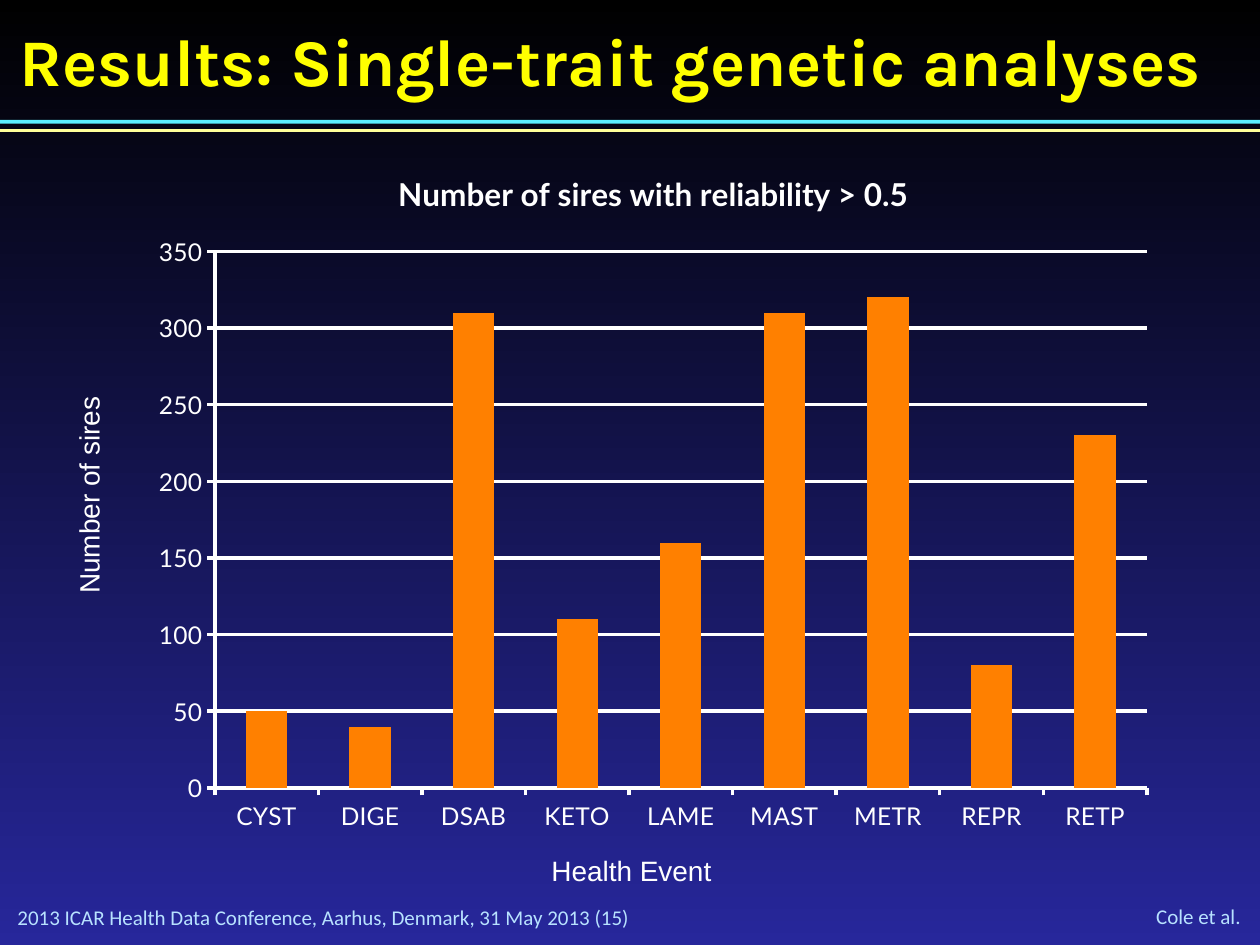
from dataclasses import dataclass

from lxml.etree import SubElement
from pptx import Presentation
from pptx.chart.data import CategoryChartData
from pptx.dml.color import RGBColor
from pptx.enum.chart import XL_CHART_TYPE, XL_TICK_MARK
from pptx.enum.shapes import MSO_SHAPE
from pptx.enum.text import MSO_ANCHOR, PP_ALIGN
from pptx.oxml.ns import qn
from pptx.util import Pt


@dataclass(frozen=True)
class Theme:
    """Colours, fonts and type sizes of the deck."""
    top: str = "000000"
    bottom: str = "27279B"
    heading: str = "FFFF00"
    cyan: str = "5BEFFF"
    cream: str = "FFFF99"
    footer: str = "B8E2FF"
    text: str = "FFFFFF"
    bar: str = "FF8000"
    heading_font: str = "Karla"
    chart_font: str = "Lato"
    label_font: str = "Arial"
    footer_font: str = "Calibri"
    heading_size: int = 38
    chart_title_size: int = 18
    label_size: int = 16
    tick_size: int = 14
    footer_size: int = 12


THEME = Theme()
CHART_TITLE = "Number of sires with reliability > 0.5"
SIRES = {"CYST": 50, "DIGE": 40, "DSAB": 310, "KETO": 110, "LAME": 160,
         "MAST": 310, "METR": 320, "REPR": 80, "RETP": 230}


def rgb(code):
    """Turn a hex code into a colour."""
    return RGBColor.from_string(code)


def style_font(font, name, size, color, bold=False):
    """Set the face, size, colour and weight of a font."""
    font.name, font.size, font.bold = name, Pt(size), bold
    font.color.rgb = rgb(color)


def add_text(slide, box, text, *, font, size, color, bold=False,
             align=PP_ALIGN.LEFT, anchor=MSO_ANCHOR.MIDDLE, rotation=0):
    """Place one line of formatted text in a box."""
    label = slide.shapes.add_textbox(*map(Pt, box))
    label.rotation = rotation
    frame = label.text_frame
    frame.word_wrap = True
    frame.vertical_anchor = anchor
    frame.margin_left = frame.margin_right = 0
    frame.margin_top = frame.margin_bottom = 0
    paragraph = frame.paragraphs[0]
    paragraph.alignment = align
    run = paragraph.add_run()
    run.text = text
    style_font(run.font, font, size, color, bold)


def paint_background(slide):
    """Fill the slide with the vertical gradient."""
    fill = slide.background.fill
    fill.gradient()
    fill.gradient_angle = 270
    for stop, color, position in zip(fill.gradient_stops, (THEME.top, THEME.bottom), (0, 1)):
        stop.color.rgb = rgb(color)
        stop.position = position


def add_header(slide, box):
    """Place the heading above its two full-width rules."""
    left, top, width, height = box
    add_text(slide, (left + 11.2, top + 11.5, width - 21, 46),
             "Results: Single-trait genetic analyses", font=THEME.heading_font,
             size=THEME.heading_size, color=THEME.heading, bold=True, anchor=MSO_ANCHOR.TOP)
    for offset, thickness, color in ((7.5, 2.2, THEME.cyan), (2.2, 1.6, THEME.cream)):
        rule = slide.shapes.add_shape(MSO_SHAPE.RECTANGLE, Pt(left), Pt(top + height - offset),
                                      Pt(width), Pt(thickness))
        rule.shadow.inherit = False
        rule.fill.solid()
        rule.fill.fore_color.rgb = rgb(color)
        rule.line.fill.background()


def style_line(line):
    """Give a chart line the white two-point stroke."""
    line.color.rgb = rgb(THEME.text)
    line.width = Pt(2)


def fix_plot_area(chart, size, plot_box):
    """Pin the inner plot area to a box in points within the chart."""
    plot_area = chart.plots[0]._element.getparent()
    layout = plot_area.find(qn("c:layout"))
    if layout is None:
        layout = SubElement(plot_area, qn("c:layout"))
        plot_area.insert(0, layout)
    manual = SubElement(layout, qn("c:manualLayout"))
    settings = {"layoutTarget": "inner", "xMode": "edge", "yMode": "edge"}
    for tag, length, whole in zip("xywh", plot_box, size * 2):
        settings[tag] = length / whole
    for tag, value in settings.items():
        SubElement(manual, qn(f"c:{tag}")).set("val", str(value))


def add_sire_chart(slide, box):
    """Place the column chart of sires per health event."""
    data = CategoryChartData()
    data.categories = list(SIRES)
    data.add_series(CHART_TITLE, list(SIRES.values()))
    chart = slide.shapes.add_chart(XL_CHART_TYPE.COLUMN_STACKED, *map(Pt, box), data).chart
    style_font(chart.font, THEME.chart_font, THEME.tick_size, THEME.text)
    chart.has_legend = False
    chart.has_title = True
    title = chart.chart_title.text_frame
    title.text = CHART_TITLE
    style_font(title.paragraphs[0].runs[0].font, THEME.chart_font,
               THEME.chart_title_size, THEME.text, bold=True)
    plot = chart.plots[0]
    plot.gap_width, plot.overlap = 150, 100
    plot.vary_by_categories = False
    columns = plot.series[0].format.fill
    columns.solid()
    columns.fore_color.rgb = rgb(THEME.bar)
    for axis in (chart.category_axis, chart.value_axis):
        axis.major_tick_mark = XL_TICK_MARK.OUTSIDE
        axis.minor_tick_mark = XL_TICK_MARK.NONE
        style_font(axis.tick_labels.font, THEME.chart_font, THEME.tick_size, THEME.text)
        style_line(axis.format.line)
    counts = chart.value_axis
    counts.minimum_scale, counts.maximum_scale, counts.major_unit = 0, 350, 50
    counts.has_major_gridlines = True
    style_line(counts.major_gridlines.format.line)
    fix_plot_area(chart, box[2:], (43.7, 60.7, 532.7, 306.6))


def add_chart_region(slide, box):
    """Place the chart with its two axis names."""
    left, top, width, height = box
    add_sire_chart(slide, (left + 45, top, width - 45, height - 32))
    axis_name = dict(font=THEME.label_font, size=THEME.label_size,
                     color=THEME.text, align=PP_ALIGN.CENTER)
    add_text(slide, (left + 260.8, top + height - 33.8, 132, 32), "Health Event", **axis_name)
    add_text(slide, (left - 69, top + 184, 171, 32), "Number of sires", rotation=270, **axis_name)


def add_footer(slide, box):
    """Place the event at the left and the authors at the right."""
    left, top, width, height = box
    note = dict(font=THEME.footer_font, size=THEME.footer_size, color=THEME.footer)
    add_text(slide, (left, top, 416, height), "2013 ICAR Health Data Conference, "
             "Aarhus, Denmark, 31 May 2013 (15)", **note)
    add_text(slide, (left + width - 81, top - 0.4, 81, height), "Cole et al.",
             align=PP_ALIGN.RIGHT, **note)


def main():
    """Build the slide and save it."""
    deck = Presentation()
    deck.slide_width, deck.slide_height = Pt(720), Pt(540)
    slide = deck.slides.add_slide(deck.slide_layouts[6])
    paint_background(slide)
    add_header(slide, (0, 0, 720, 76))
    add_chart_region(slide, (34, 83, 633.5, 432))
    add_footer(slide, (10, 516.5, 699, 15))
    deck.save("out.pptx")


if __name__ == "__main__":
    main()
